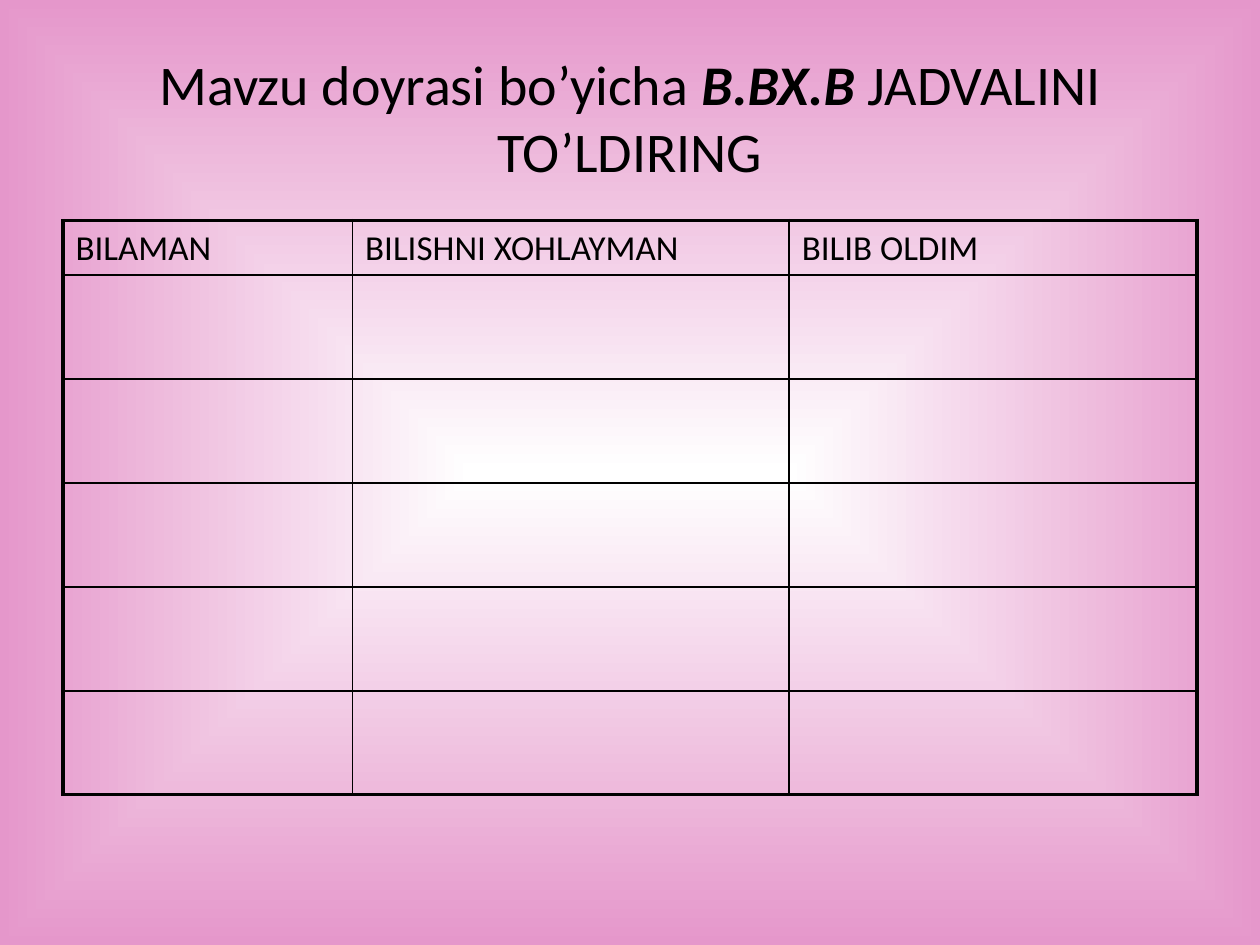
"""Build a slide with a three-column know / want to know / learned table."""
from dataclasses import dataclass

from lxml import etree
from pptx import Presentation
from pptx.dml.color import RGBColor
from pptx.enum.text import MSO_ANCHOR, PP_ALIGN
from pptx.oxml.ns import qn
from pptx.util import Pt

CENTER = PP_ALIGN.CENTER
MIDDLE = MSO_ANCHOR.MIDDLE
FONT = "Calibri"
BLACK, WHITE, PINK = "000000", "FFFFFF", "E597CB"
THIN, THICK = 1, 2.25
LEFT, TABLE_TOP = 36, 126
HEADER_HEIGHT, ROW_HEIGHT, EMPTY_ROWS = 31, 59.4, 5


@dataclass(frozen=True)
class Column:
    """A table column with its heading and width in points."""
    heading: str
    width: float


@dataclass(frozen=True)
class Span:
    """A piece of title text."""
    text: str
    emphasis: bool = False


COLUMNS = (
    Column("BILAMAN", 165.5),
    Column("BILISHNI XOHLAYMAN", 249.5),
    Column("BILIB OLDIM", 233),
)
TITLE = (
    Span("Mavzu doyrasi bo’yicha "),
    Span("B.BX.B", emphasis=True),
    Span(" JADVALINI TO’LDIRING"),
)


def color(value: str) -> RGBColor:
    """Return the colour for a hex string."""
    return RGBColor.from_string(value)


def style_font(font, size: float) -> None:
    """Apply the slide's typeface and text colour."""
    font.name = FONT
    font.size = Pt(size)
    font.color.rgb = color(BLACK)


def paint_background(page) -> None:
    """Fill the page with a gradient from a white centre to pink edges."""
    fill = page.background.fill
    fill.gradient()
    for stop, value, position in zip(fill.gradient_stops, (WHITE, PINK), (0, 1)):
        stop.color.rgb = color(value)
        stop.position = position
    linear = next(page.background._cSld.iter(qn("a:lin")))
    gradient = linear.getparent()
    shape_path = etree.Element(qn("a:path"), {"path": "shape"})
    etree.SubElement(shape_path, qn("a:fillToRect"), dict.fromkeys("ltrb", "50000"))
    gradient.replace(linear, shape_path)


def add_title(page, spans: tuple[Span, ...]) -> None:
    """Add the centred title."""
    box = page.shapes.add_textbox(Pt(LEFT), Pt(21.6), Pt(648), Pt(90))
    frame = box.text_frame
    frame.word_wrap = True
    frame.vertical_anchor = MIDDLE
    para = frame.paragraphs[0]
    para.alignment = CENTER
    style_font(para.font, 32)
    for span in spans:
        run = para.add_run()
        run.text = span.text
        run.font.bold = run.font.italic = span.emphasis


def set_borders(cell, widths: dict[str, float]) -> None:
    """Draw solid black cell borders, with widths keyed by side."""
    properties = cell._tc.get_or_add_tcPr()
    for index, side in enumerate("LRTB"):
        line = etree.Element(qn(f"a:ln{side}"), {"w": str(Pt(widths[side]))})
        solid = etree.SubElement(line, qn("a:solidFill"))
        etree.SubElement(solid, qn("a:srgbClr"), {"val": BLACK})
        properties.insert(index, line)


def write_heading(cell, text: str) -> None:
    """Write a column heading with proportional space before it."""
    cell.text = text
    para = cell.text_frame.paragraphs[0]
    style_font(para.font, 20)
    spacing = etree.Element(qn("a:spcBef"))
    etree.SubElement(spacing, qn("a:spcPct"), {"val": "20000"})
    para._p.get_or_add_pPr().insert(0, spacing)


def add_table(page, columns: tuple[Column, ...]) -> None:
    """Add the table with a thick frame and thin inner lines."""
    heights = [HEADER_HEIGHT] + [ROW_HEIGHT] * EMPTY_ROWS
    last_row, last_column = len(heights) - 1, len(columns) - 1
    table = page.shapes.add_table(
        len(heights), len(columns), Pt(LEFT), Pt(TABLE_TOP),
        Pt(sum(column.width for column in columns)), Pt(sum(heights)),
    ).table
    table.first_row = table.horz_banding = False
    for row, height in zip(table.rows, heights):
        row.height = Pt(height)
    for column_index, column in enumerate(columns):
        table.columns[column_index].width = Pt(column.width)
        write_heading(table.cell(0, column_index), column.heading)
        for row_index in range(len(heights)):
            cell = table.cell(row_index, column_index)
            cell.fill.background()
            outer = {
                "L": column_index == 0, "R": column_index == last_column,
                "T": row_index == 0, "B": row_index == last_row,
            }
            set_borders(cell, {side: THICK if edge else THIN for side, edge in outer.items()})


def main() -> None:
    """Build and save the deck."""
    deck = Presentation()
    deck.slide_width, deck.slide_height = Pt(720), Pt(540)
    page = deck.slides.add_slide(deck.slide_layouts[6])
    paint_background(page)
    add_title(page, TITLE)
    add_table(page, COLUMNS)
    deck.save("out.pptx")


if __name__ == "__main__":
    main()
